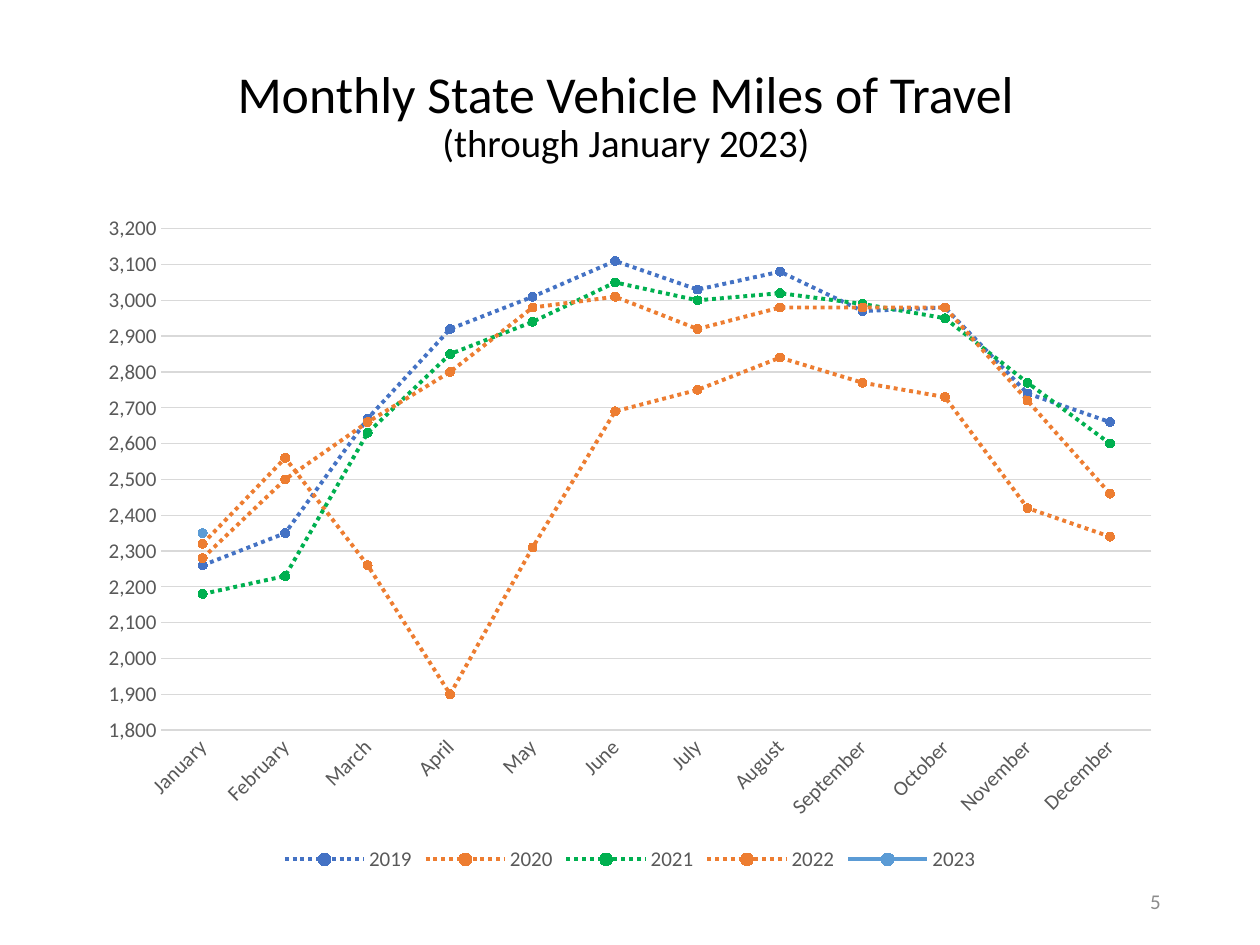
from pptx import Presentation
from pptx import util as u
from pptx.chart.data import CategoryChartData
from pptx.dml.color import RGBColor
from pptx.enum import chart as kinds, dml, text

FONT = "Calibri"
GRAY = "595959"
GRID = "D9D9D9"
MONTHS = ["January", "February", "March", "April", "May", "June", "July",
          "August", "September", "October", "November", "December"]
MILES = {
    "2019": ("4472C4", [2260, 2350, 2670, 2920, 3010, 3110,
                        3030, 3080, 2970, 2980, 2740, 2660]),
    "2020": ("ED7D31", [2320, 2560, 2260, 1900, 2310, 2690,
                        2750, 2840, 2770, 2730, 2420, 2340]),
    "2021": ("00B050", [2180, 2230, 2630, 2850, 2940, 3050,
                        3000, 3020, 2990, 2950, 2770, 2600]),
    "2022": ("ED7D31", [2280, 2500, 2660, 2800, 2980, 3010,
                        2920, 2980, 2980, 2980, 2720, 2460]),
    "2023": ("5B9BD5", [2350] + [None] * 11),
}


def color(value):
    return RGBColor.from_string(value)


def set_font(font, size, fill):
    font.name = FONT
    font.size = u.Pt(size)
    font.color.rgb = color(fill)


def set_line(line, fill, width):
    line.color.rgb = color(fill)
    line.width = u.Pt(width)


def place(shape, left, top, width, height):
    shape.left, shape.top = u.Pt(left), u.Pt(top)
    shape.width, shape.height = u.Pt(width), u.Pt(height)


def write(para, words, size, fill="000000", align=text.PP_ALIGN.CENTER, spacing=None):
    para.alignment = align
    para.line_spacing = spacing
    span = para.add_run()
    span.text = words
    set_font(span.font, size, fill)


def add_title(page):
    title = page.shapes.title
    place(title, 47.5, 31.7, 620.6, 67)
    frame = title.text_frame
    frame.auto_size = text.MSO_AUTO_SIZE.NONE
    frame.vertical_anchor = text.MSO_ANCHOR.BOTTOM
    write(frame.paragraphs[0], "Monthly State Vehicle Miles of Travel", 29.6, spacing=0.9)
    write(frame.add_paragraph(), "(through January 2023)", 22.2, spacing=0.9)


def add_page_number(page):
    box = page.shapes.add_textbox(u.Pt(508.3), u.Pt(500.4), u.Pt(162), u.Pt(28.8))
    box.text_frame.word_wrap = True
    box.text_frame.vertical_anchor = text.MSO_ANCHOR.MIDDLE
    write(box.text_frame.paragraphs[0], "5", 12, "8C8C8C", text.PP_ALIGN.RIGHT)


def format_axes(chart):
    months, miles = chart.category_axis, chart.value_axis
    for axis in (months, miles):
        axis.major_tick_mark = axis.minor_tick_mark = kinds.XL_TICK_MARK.NONE
        set_font(axis.tick_labels.font, 12, GRAY)
    set_line(months.format.line, GRID, 0.75)
    slant = months._element.txPr.bodyPr
    slant.set("rot", "-2700000")
    slant.set("vert", "horz")

    miles.minimum_scale, miles.maximum_scale = 1800, 3200
    miles.major_unit = 100
    miles.tick_labels.number_format = "#,##0"
    miles.tick_labels.number_format_is_linked = False
    miles.format.line.fill.background()
    set_line(miles.major_gridlines.format.line, GRID, 0.75)


def format_series(series, fill, dotted):
    series.smooth = False
    set_line(series.format.line, fill, 2.25)
    if dotted:
        series.format.line.dash_style = dml.MSO_LINE.ROUND_DOT
    marker = series.marker
    marker.style = kinds.XL_MARKER_STYLE.CIRCLE
    marker.size = 5
    marker.format.fill.solid()
    marker.format.fill.fore_color.rgb = color(fill)
    set_line(marker.format.line, fill, 0.75)


def add_miles_chart(page):
    data = CategoryChartData(number_format="#,##0")
    data.categories = MONTHS
    for year, (_, values) in MILES.items():
        data.add_series(year, values)
    chart = page.shapes.add_chart(
        kinds.XL_CHART_TYPE.LINE_MARKERS,
        u.Pt(49.7), u.Pt(115.9), u.Pt(620.6), u.Pt(385.2), data).chart
    chart.has_title = False
    set_font(chart.font, 10, "000000")
    chart.has_legend = True
    chart.legend.position = kinds.XL_LEGEND_POSITION.BOTTOM
    chart.legend.include_in_layout = False
    set_font(chart.legend.font, 12, GRAY)
    format_axes(chart)
    plot = chart.plots[0]
    plot.vary_by_categories = False
    for series in plot.series:
        format_series(series, MILES[series.name][0], dotted=series.name != "2023")


def main():
    deck = Presentation()
    deck.slide_width, deck.slide_height = u.Pt(720), u.Pt(540)
    page = deck.slides.add_slide(deck.slide_layouts[5])
    add_miles_chart(page)
    add_page_number(page)
    add_title(page)
    deck.save("out.pptx")


if __name__ == "__main__":
    main()
